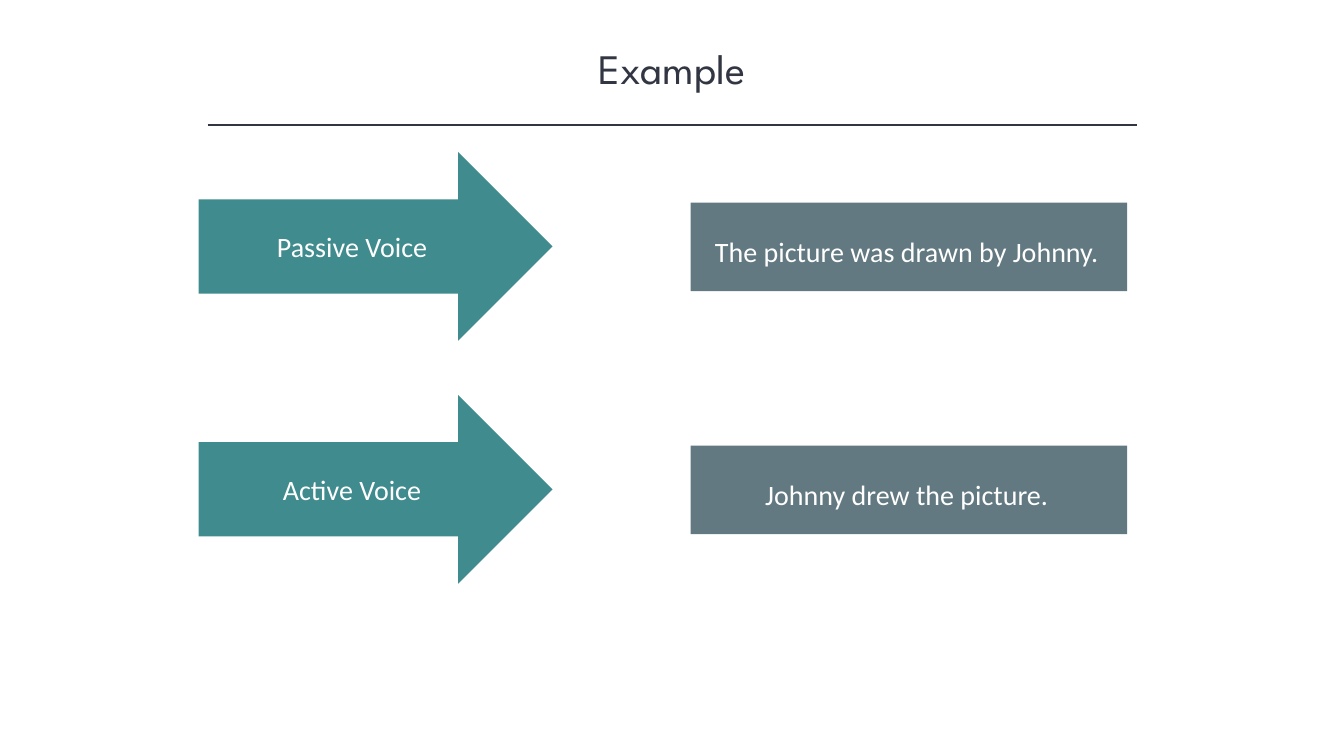
import pptx
import pptx.util
import pptx.dml.color
import pptx.enum.shapes
import pptx.enum.text
import pptx.oxml.ns
import lxml.etree

INK = pptx.dml.color.RGBColor(0x32, 0x35, 0x42)
TEAL = pptx.dml.color.RGBColor(0x3F, 0x8B, 0x8D)
SLATE = pptx.dml.color.RGBColor(0x62, 0x79, 0x81)
WHITE = pptx.dml.color.RGBColor(0xFF, 0xFF, 0xFF)
SHAPES = pptx.enum.shapes.MSO_SHAPE
ANCHOR = pptx.enum.text.MSO_ANCHOR


class Deck:
    """Draws styled parts on one slide, with lengths in percent of its size."""

    head = "League Spartan"
    body = "Calibri"

    def __init__(self):
        self.show = pptx.Presentation()
        self.show.slide_width = pptx.util.Inches(13.33)
        self.show.slide_height = pptx.util.Inches(7.5)
        self.slide = self.show.slides.add_slide(self.show.slide_layouts[6])

    def place(self, *shares):
        sides = (self.show.slide_width, self.show.slide_height) * 2
        return [round(side * share / 100) for side, share in zip(sides, shares)]

    def label(self, shape, text, font, size, color, anchor):
        frame = shape.text_frame
        frame.word_wrap = True
        frame.vertical_anchor = anchor
        frame.text = text
        line = frame.paragraphs[0]
        line.alignment = pptx.enum.text.PP_ALIGN.CENTER
        style = line.runs[0].font
        style.name = font
        style.size = pptx.util.Pt(size)
        style.color.rgb = color

    def title(self, text, *box):
        shape = self.slide.shapes.add_textbox(*self.place(*box))
        self.label(shape, text, self.head, 30, INK, ANCHOR.TOP)

    def rule(self, *ends):
        kind = pptx.enum.shapes.MSO_CONNECTOR.STRAIGHT
        line = self.slide.shapes.add_connector(kind, *self.place(*ends))
        line.line.color.rgb = INK
        line.line.width = pptx.util.Pt(1)
        props = line._element.spPr
        lxml.etree.SubElement(props, pptx.oxml.ns.qn("a:effectLst"))

    def block(self, kind, fill, box, text="", anchor=ANCHOR.MIDDLE):
        shape = self.slide.shapes.add_shape(kind, *self.place(*box))
        shape.shadow.inherit = False
        shape.fill.solid()
        shape.fill.fore_color.rgb = fill
        shape.line.fill.background()
        if text:
            self.label(shape, text, self.body, 20, WHITE, anchor)

    def voice(self, name, text, drop):
        self.block(SHAPES.RIGHT_ARROW, TEAL, (14.78, 20.13 + drop, 26.33, 24.93), name)
        self.block(SHAPES.RECTANGLE, SLATE, (51.38, 26.8 + drop, 32.48, 11.73))
        self.block(SHAPES.RECTANGLE, SLATE, (51.75, 30.4 + drop, 31.43, 5.87), text, ANCHOR.TOP)


def main():
    deck = Deck()
    deck.title("Example", 12.5, 4.93, 75, 8.13)
    deck.rule(15.45, 16.53, 84.6, 16.53)
    pairs = [
        ("Passive Voice", "The picture was drawn by Johnny."),
        ("Active Voice", "Johnny drew the picture."),
    ]
    for row, (name, text) in enumerate(pairs):
        deck.voice(name, text, row * 32.13)
    deck.show.save("out.pptx")


if __name__ == "__main__":
    main()
